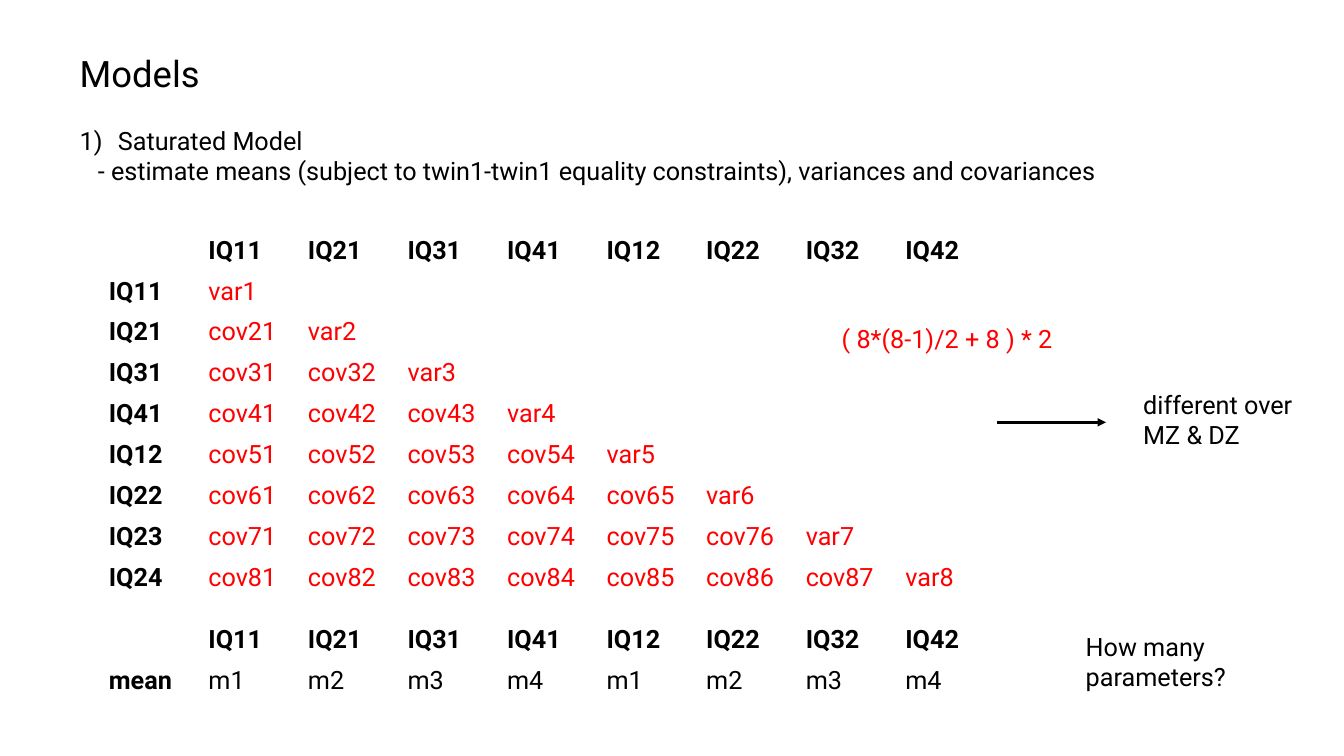
from dataclasses import dataclass

from lxml import etree
from pptx import Presentation
from pptx import util as u
from pptx.dml.color import RGBColor
from pptx.enum import shapes, text
from pptx.oxml import ns


@dataclass(frozen=True)
class Theme:
    """Colours, font and type sizes of the slide."""
    font: str = "Roboto"
    ink: RGBColor = RGBColor(0, 0, 0)
    accent: RGBColor = RGBColor(255, 0, 0)
    paper: RGBColor = RGBColor(255, 255, 255)
    title: int = 26
    body: int = 18


THEME = Theme()
VARIABLES = ["IQ11", "IQ21", "IQ31", "IQ41", "IQ12", "IQ22", "IQ32", "IQ42"]
ROW_LABELS = VARIABLES[:6] + ["IQ23", "IQ24"]


def add_node(parent, tag, **attributes):
    """Append a DrawingML element and return it."""
    return etree.SubElement(parent, ns.qn(tag), attributes)


def format_text(frame, size=THEME.body, color=THEME.ink, bold=False):
    """Apply the theme font to every run in a text frame."""
    for paragraph in frame.paragraphs:
        paragraph.alignment = text.PP_ALIGN.LEFT
        paragraph.space_before = u.Pt(0)
        for run in paragraph.runs:
            run.font.name = THEME.font
            run.font.size = u.Pt(size)
            run.font.color.rgb = color
            run.font.bold = bold


def place(placeholder, box, wording):
    """Move a placeholder to its box and fill it from the top."""
    placeholder.left, placeholder.top, placeholder.width, placeholder.height = map(u.Inches, box)
    frame = placeholder.text_frame
    frame.text = wording
    frame.auto_size = text.MSO_AUTO_SIZE.NONE
    frame.vertical_anchor = text.MSO_ANCHOR.TOP
    return frame


def add_heading(slide, box):
    """Place the title and the numbered model description."""
    left, top, width, height = box
    title = place(slide.shapes.title, (left, top, width, 0.55), "Models")
    format_text(title, THEME.title)
    description = place(
        slide.placeholders[1], (left, top + 0.73, width, height - 0.73),
        "Saturated Model\n- estimate means (subject to twin1-twin1 equality constraints), "
        "variances and covariances")
    format_text(description)
    bullets = [(0.38, -0.38, "a:buAutoNum", {"type": "arabicParenR"}),
               (0.18, 0, "a:buNone", {})]
    for paragraph, (margin, indent, bullet, attributes) in zip(description.paragraphs, bullets):
        properties = paragraph._p.get_or_add_pPr()
        properties.set("marL", str(u.Inches(margin)))
        properties.set("indent", str(u.Inches(indent)))
        if attributes:
            add_node(properties, "a:buFont", typeface="+mj-lt")
        add_node(properties, bullet, **attributes)


def style_cell(cell, header_row):
    """Give a cell white rules and no fill."""
    properties = cell._tc.get_or_add_tcPr()
    for side in "LRTB":
        weight = 3 if header_row and side == "B" else 1
        rule = add_node(properties, f"a:ln{side}", w=str(u.Pt(weight)))
        add_node(add_node(rule, "a:solidFill"), "a:srgbClr", val=str(THEME.paper))
    cell.fill.background()


def add_matrix(slide, box, rows, value_color):
    """Add a table with a bold header row and label column."""
    left, top, width, height = map(u.Inches, box)
    matrix = slide.shapes.add_table(len(rows), len(rows[0]), left, top, width, height).table
    matrix.first_row = matrix.horz_banding = False
    for row_index, row in enumerate(rows):
        for column_index, wording in enumerate(row):
            cell = matrix.cell(row_index, column_index)
            style_cell(cell, row_index == 0)
            cell.text_frame.text = wording
            label = row_index == 0 or column_index == 0
            format_text(cell.text_frame, color=THEME.ink if label else value_color, bold=label)


def covariance_rows():
    """Return the lower triangle of variances and covariances."""
    def entry(row, column):
        if column > row:
            return ""
        return f"var{row}" if row == column else f"cov{row}{column}"

    count = len(VARIABLES)
    return [["", *VARIABLES]] + [
        [label, *(entry(row, column) for column in range(1, count + 1))]
        for row, label in enumerate(ROW_LABELS, 1)]


def mean_rows():
    """Return the means, equal for both twins."""
    return [["", *VARIABLES], ["mean", *(f"m{index % 4 + 1}" for index in range(len(VARIABLES)))]]


def add_note(slide, box, wording, color=THEME.ink):
    """Add a wrapped remark in its box."""
    frame = slide.shapes.add_textbox(*map(u.Inches, box)).text_frame
    frame.word_wrap = True
    frame.text = wording
    format_text(frame, color=color)


def add_group_difference(slide, box):
    """Add the arrow and the remark it points to."""
    left, top, width, height = box
    arrow_y = u.Inches(top + 0.38)
    arrow = slide.shapes.add_connector(
        shapes.MSO_CONNECTOR.STRAIGHT, u.Inches(left), arrow_y, u.Inches(left + 1.08), arrow_y)
    arrow.line.color.rgb = THEME.ink
    arrow.line.width = u.Pt(2)
    add_node(arrow.line._get_or_add_ln(), "a:tailEnd", type="triangle")
    add_node(arrow._element.spPr, "a:effectLst")
    add_note(slide, (left + 1.35, top, width - 1.35, height), "different over\nMZ & DZ")


def add_models_slide(deck):
    """Build the saturated model slide."""
    slide = deck.slides.add_slide(deck.slide_layouts[1])
    add_heading(slide, (0.69, 0.46, 12.04, 1.45))
    add_matrix(slide, (0.98, 2.29, 8.89, 3.65), covariance_rows(), THEME.accent)
    add_matrix(slide, (0.98, 6.15, 8.89, 0.81), mean_rows(), THEME.ink)
    add_group_difference(slide, (9.89, 3.81, 3.44, 0.71))
    add_note(slide, (8.25, 3.16, 2.71, 0.4), "( 8*(8-1)/2 + 8 ) * 2", THEME.accent)
    add_note(slide, (10.67, 6.21, 2.49, 0.71), "How many parameters?")


def main():
    """Create and save the deck."""
    deck = Presentation()
    deck.slide_width, deck.slide_height = u.Inches(13.33), u.Inches(7.5)
    add_models_slide(deck)
    deck.save("out.pptx")


if __name__ == "__main__":
    main()
